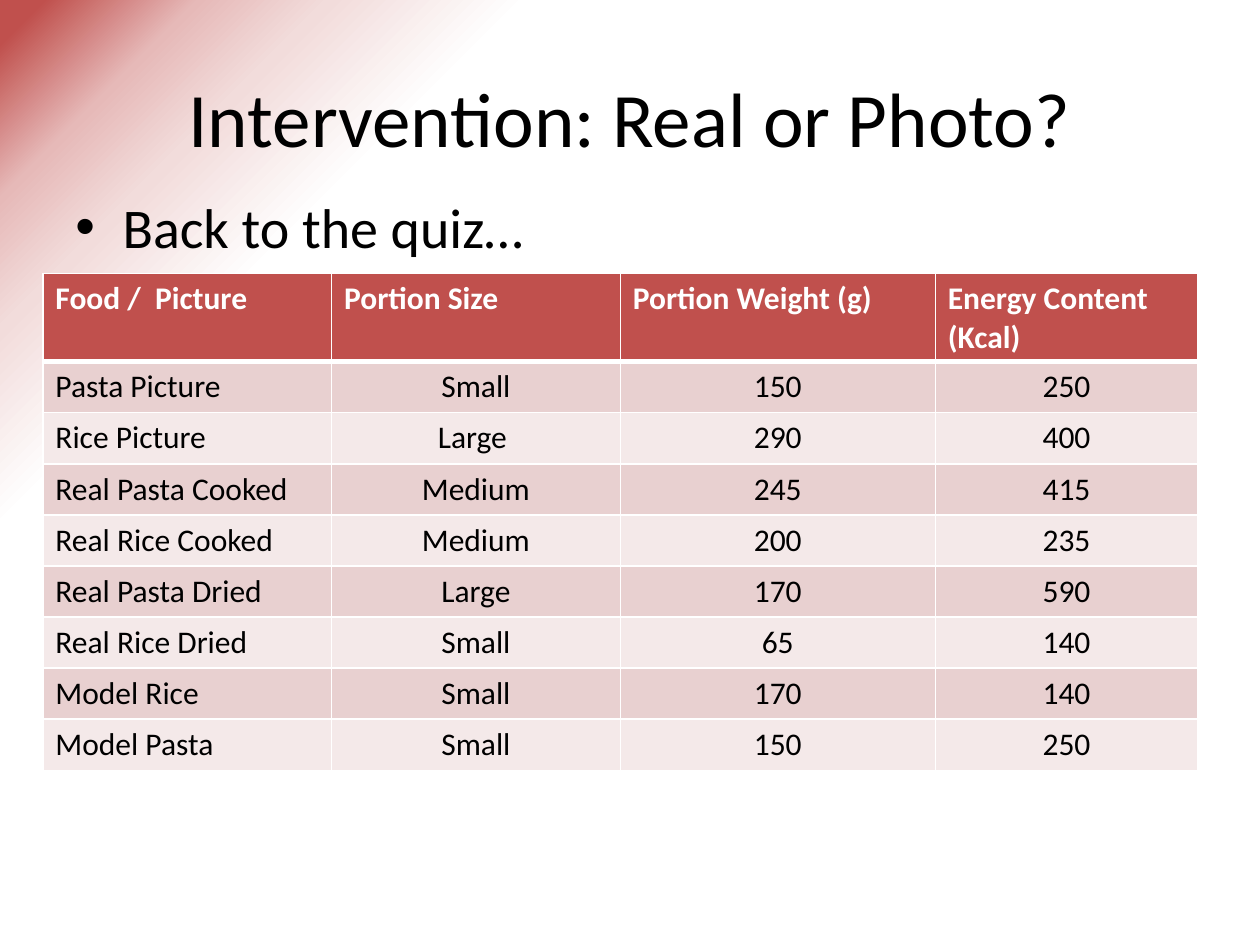
"""Build the quiz answers slide with its food portion table."""
from lxml.etree import SubElement
from pptx import Presentation
from pptx.dml.color import RGBColor
from pptx.enum.text import MSO_ANCHOR, PP_ALIGN
from pptx.oxml.ns import qn
from pptx.util import Pt

COLORS = {
    "text": "000000",
    "white": "FFFFFF",
    "blush": "F2DCDB",
    "pink": "E6B9B8",
    "red": "C0504D",
    "band_dark": "E8D0D0",
    "band_light": "F4E9E9",
}
GRADIENT_STOPS = [(76, "white"), (85, "blush"), (91, "pink"), (98, "red")]
COLUMN_WIDTHS = [165, 165, 180, 150]
ROW_HEIGHT = 29.2
ROWS = [
    ("Food /  Picture", "Portion Size", "Portion Weight (g)", "Energy Content (Kcal)"),
    ("Pasta Picture", "Small", "150", "250"),
    ("Rice Picture", "Large ", "290", "400"),
    ("Real Pasta Cooked", "Medium", "245", "415"),
    ("Real Rice Cooked", "Medium", "200", "235"),
    ("Real Pasta Dried", "Large", "170", "590"),
    ("Real Rice Dried", "Small", "65", "140"),
    ("Model Rice", "Small", "170", "140"),
    ("Model Pasta", "Small", "150", "250"),
]


def write_text(frame, text, size=18, color="text", bold=False, align=PP_ALIGN.LEFT, bullet=False):
    frame.word_wrap = True
    paragraph = frame.paragraphs[0]
    paragraph.alignment = align
    if bullet:
        properties = paragraph._p.get_or_add_pPr()
        properties.set("marL", str(Pt(27)))
        properties.set("indent", str(Pt(-27)))
        SubElement(properties, qn("a:buFont"), typeface="Arial")
        SubElement(properties, qn("a:buChar"), char="•")
    run = paragraph.add_run()
    run.text = text
    run.font.name = "Calibri"
    run.font.size = Pt(size)
    run.font.bold = bold
    run.font.color.rgb = RGBColor.from_string(COLORS[color])


def add_border(cell, side, width):
    line = SubElement(cell._tc.get_or_add_tcPr(), qn(f"a:{side}"), w=str(Pt(width)))
    fill = SubElement(line, qn("a:solidFill"))
    SubElement(fill, qn("a:srgbClr"), val=COLORS["white"])


presentation = Presentation()
presentation.slide_width = Pt(720)
presentation.slide_height = Pt(540)
slide = presentation.slides.add_slide(presentation.slide_layouts[6])

slide.background.fill.gradient()
gradient = slide.element.find(".//" + qn("a:gradFill"))
for child in list(gradient):
    gradient.remove(child)
stop_list = SubElement(gradient, qn("a:gsLst"))
for position, color in GRADIENT_STOPS:
    stop = SubElement(stop_list, qn("a:gs"), pos=str(position * 1000))
    SubElement(stop, qn("a:srgbClr"), val=COLORS[color])
circle = SubElement(gradient, qn("a:path"))
circle.set("path", "circle")
SubElement(circle, qn("a:fillToRect"), l="100000", t="100000")

title = slide.shapes.add_textbox(Pt(36), Pt(21.6), Pt(648), Pt(90))
title.text_frame.vertical_anchor = MSO_ANCHOR.MIDDLE
write_text(title.text_frame, "Intervention: Real or Photo?", size=44, align=PP_ALIGN.CENTER)

body = slide.shapes.add_textbox(Pt(36), Pt(106.6), Pt(648), Pt(361.4))
write_text(body.text_frame, "Back to the quiz…", size=32, bullet=True)

table = slide.shapes.add_table(
    len(ROWS), len(COLUMN_WIDTHS), Pt(24.5), Pt(156.2),
    Pt(sum(COLUMN_WIDTHS)), Pt(ROW_HEIGHT * len(ROWS)),
).table
for column, width in zip(table.columns, COLUMN_WIDTHS):
    column.width = Pt(width)
for row_index, values in enumerate(ROWS):
    table.rows[row_index].height = Pt(ROW_HEIGHT)
    header = row_index == 0
    band = "red" if header else "band_dark" if row_index % 2 else "band_light"
    for column_index, value in enumerate(values):
        cell = table.cell(row_index, column_index)
        centred = column_index > 0 and not header
        write_text(
            cell.text_frame, value, bold=header, color="white" if header else "text",
            align=PP_ALIGN.CENTER if centred else PP_ALIGN.LEFT,
        )
        add_border(cell, "lnL", 1)
        add_border(cell, "lnR", 1)
        add_border(cell, "lnT", 3 if row_index == 1 else 1)
        add_border(cell, "lnB", 3 if header else 1)
        cell.fill.solid()
        cell.fill.fore_color.rgb = RGBColor.from_string(COLORS[band])

presentation.save("out.pptx")
